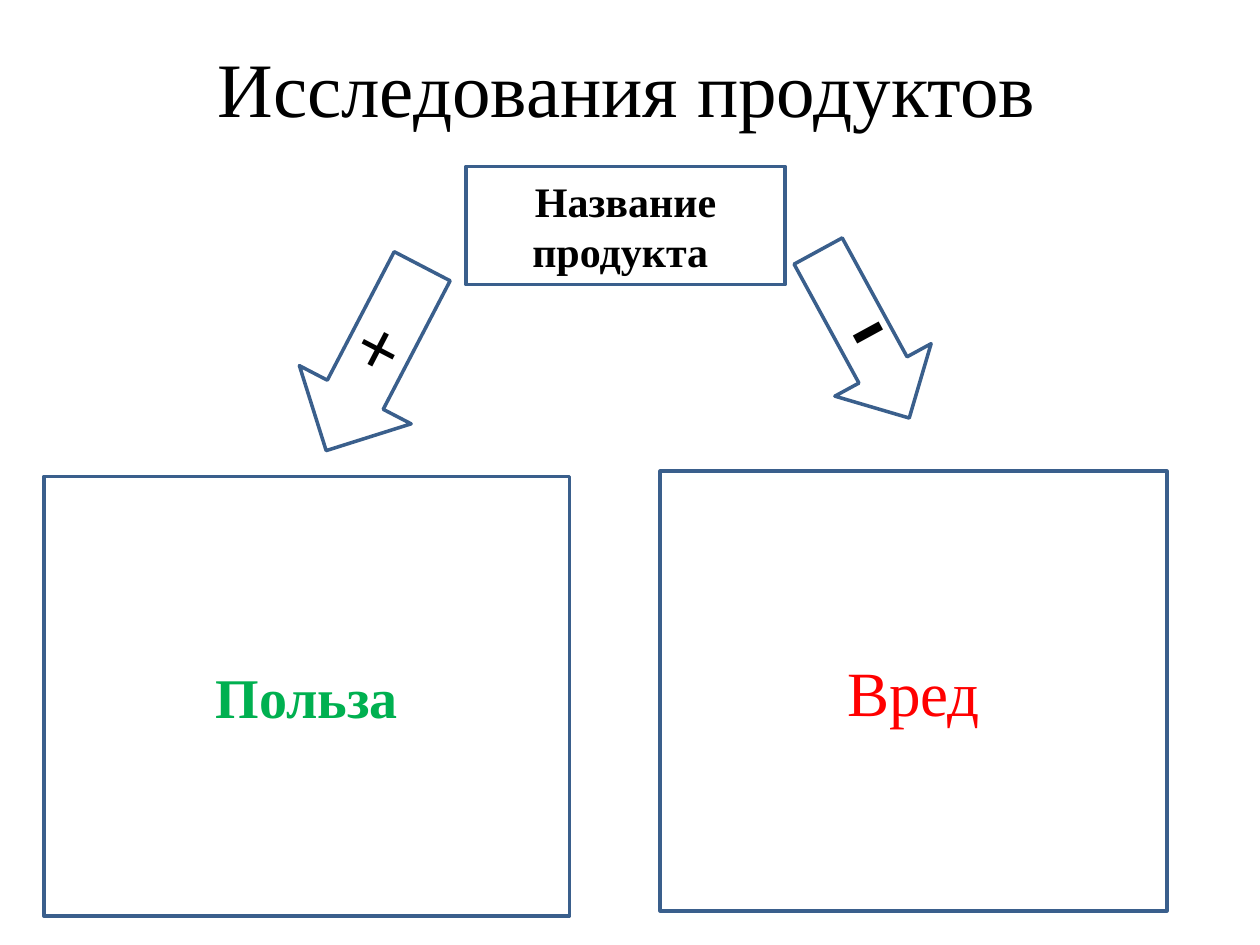
from pptx import Presentation
from pptx.dml.color import RGBColor
from pptx.enum.shapes import MSO_SHAPE
from pptx.enum.text import MSO_ANCHOR, PP_ALIGN
from pptx.util import Inches, Pt

RECTANGLE = MSO_SHAPE.RECTANGLE
DOWN_ARROW = MSO_SHAPE.DOWN_ARROW
MIDDLE = MSO_ANCHOR.MIDDLE
CENTER = PP_ALIGN.CENTER

COLORS = {
    "text": "000000",
    "outline": "3A5F8C",
    "benefit": "00B050",
    "harm": "FF0000",
}
SERIF = "Times New Roman"
SANS = "Calibri"
TITLE_ONLY = 5


class SlideBuilder:
    def __init__(self, slide):
        self.slide = slide

    def color(self, name):
        return RGBColor.from_string(COLORS[name])

    def add_label(self, shape, text, size, color="text", font=SERIF, bold=False):
        frame = shape.text_frame
        frame.word_wrap = True
        frame.vertical_anchor = MIDDLE
        paragraph = frame.paragraphs[0]
        paragraph.alignment = CENTER
        run = paragraph.add_run()
        run.text = text
        run.font.size = Pt(size)
        run.font.name = font
        run.font.bold = bold
        run.font.color.rgb = self.color(color)

    def title(self, text, left, top, width, height):
        shape = self.slide.shapes.title
        shape.left, shape.top = Inches(left), Inches(top)
        shape.width, shape.height = Inches(width), Inches(height)
        self.add_label(shape, text, 44)

    def outlined(self, kind, left, top, width, height):
        shape = self.slide.shapes.add_shape(
            kind, Inches(left), Inches(top), Inches(width), Inches(height))
        shape.shadow.inherit = False
        shape.fill.background()
        shape.line.color.rgb = self.color("outline")
        shape.line.width = Pt(2)
        return shape

    def box(self, text, left, top, width, height, size, color="text", bold=False):
        shape = self.outlined(RECTANGLE, left, top, width, height)
        self.add_label(shape, text, size, color, bold=bold)

    def arrow(self, sign, left, top, width, height, rotation, size):
        shape = self.outlined(DOWN_ARROW, left, top, width, height)
        shape.rotation = rotation
        self.add_label(shape, sign, size, font=SANS)


def main():
    presentation = Presentation()
    presentation.slide_width = Inches(10)
    presentation.slide_height = Inches(7.5)
    layout = presentation.slide_layouts[TITLE_ONLY]
    builder = SlideBuilder(presentation.slides.add_slide(layout))

    builder.title("Исследования продуктов ", 0.55, 0.06, 9, 1.25)
    builder.box("Название продукта ", 3.7, 1.32, 2.53, 0.94, 24, bold=True)
    builder.arrow("+", 2.47, 2.02, 1, 1.65, 27.5, 44)
    builder.box("Польза", 0.35, 3.78, 4.17, 3.49, 32, "benefit", bold=True)
    builder.box("Вред", 5.24, 3.74, 4.02, 3.49, 36, "harm")
    builder.arrow("-", 6.42, 1.9, 0.87, 1.51, 331.4, 72)

    presentation.save("out.pptx")


if __name__ == "__main__":
    main()
